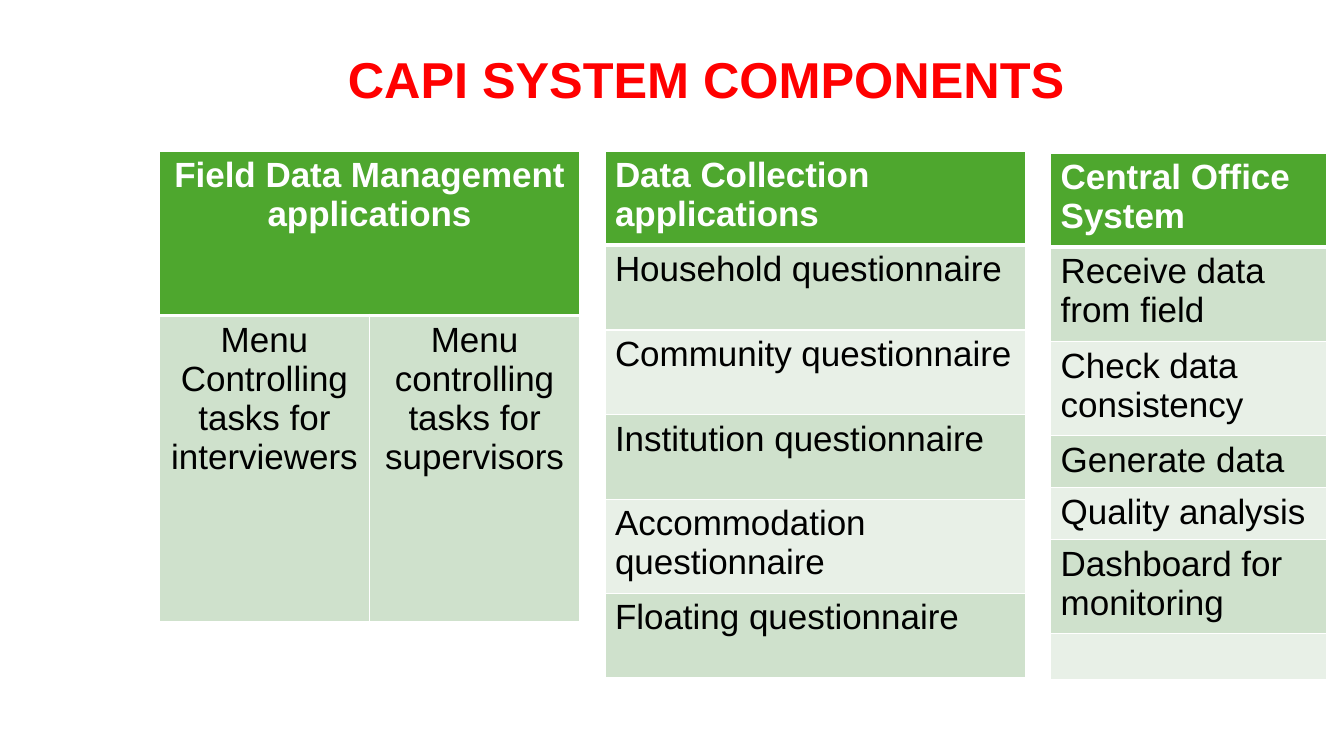
from pptx import Presentation
from pptx.dml.color import RGBColor
from pptx.enum.text import MSO_ANCHOR as Anchor, PP_ALIGN as Align
from pptx.oxml import parse_xml
from pptx.oxml.ns import nsdecls
from pptx.util import Inches, Pt

GREEN, SAGE, MIST = "4EA72E", "CFE1CC", "E8F0E7"
WHITE, BLACK, RED = "FFFFFF", "000000", "FF0000"


def color(code):
    return RGBColor.from_string(code)


class Deck:
    font = "Arial"
    size = 25

    def __init__(self):
        self.prs = Presentation()
        self.prs.slide_width = Inches(13.33)
        self.prs.slide_height = Inches(7.5)
        self.slide = self.prs.slides.add_slide(self.prs.slide_layouts[6])

    def label(self, frame, text, tint, bold=False, size=None, align=Align.LEFT):
        para = frame.paragraphs[0]
        para.alignment = align
        run = para.add_run()
        run.text = text
        form = {"name": self.font, "size": Pt(size or self.size), "bold": bold}
        for key, value in form.items():
            setattr(run.font, key, value)
        run.font.color.rgb = color(tint)
        return para

    def title(self, text, *box):
        frame = self.slide.shapes.add_textbox(*map(Inches, box)).text_frame
        form = {"word_wrap": True, "vertical_anchor": Anchor.MIDDLE}
        for key, value in form.items():
            setattr(frame, key, value)
        para = self.label(frame, text, RED, True, 36, Align.CENTER)
        para.line_spacing = 0.9

    def edge(self, cell, row):
        widths = {"L": 1, "R": 1, "T": 3 if row == 1 else 1, "B": 1 if row else 3}
        props = cell._tc.get_or_add_tcPr()
        for spot, (side, width) in enumerate(widths.items()):
            props.insert(spot, parse_xml(
                f'<a:ln{side} {nsdecls("a")} w="{Pt(width)}"><a:solidFill>'
                f'<a:srgbClr val="{WHITE}"/></a:solidFill></a:ln{side}>'))

    def table(self, left, top, width, highs, rows, align=Align.LEFT):
        cols = max(map(len, rows))
        box = map(Inches, (left, top, width, sum(highs)))
        grid = self.slide.shapes.add_table(len(rows), cols, *box).table
        for col in grid.columns:
            col.width = Inches(width / cols)
        for i, (high, texts) in enumerate(zip(highs, rows)):
            grid.rows[i].height = Inches(high)
            if len(texts) < cols:
                grid.cell(i, 0).merge(grid.cell(i, cols - 1))
            for j in range(cols):
                cell = grid.cell(i, j)
                cell.fill.solid()
                fill = (SAGE if i % 2 else MIST) if i else GREEN
                cell.fill.fore_color.rgb = color(fill)
                self.edge(cell, i)
                if j < len(texts) and texts[j]:
                    tint = BLACK if i else WHITE
                    self.label(cell.text_frame, texts[j], tint, i == 0, align=align)


def main():
    deck = Deck()
    deck.title("CAPI SYSTEM COMPONENTS", 1.6, 0.43, 10.81, 0.78)
    deck.table(1.58, 1.5, 4.17, [1.63, 3.04], [
        ["Field Data Management applications"],
        ["Menu Controlling tasks for interviewers",
         "Menu controlling tasks for supervisors"],
    ], Align.CENTER)
    forms = ["Data Collection applications", "Household questionnaire",
             "Community questionnaire", "Institution questionnaire",
             "Accommodation questionnaire", "Floating questionnaire"]
    deck.table(6, 1.5, 4.17, [0.84] * len(forms), [[form] for form in forms])
    tasks = ["Central Office System", "Receive data from field",
             "Check data consistency", "Generate data", "Quality analysis",
             "Dashboard for monitoring", ""]
    deck.table(10.42, 1.52, 2.74, [0.45] * len(tasks), [[task] for task in tasks])
    deck.prs.save("out.pptx")


if __name__ == "__main__":
    main()
